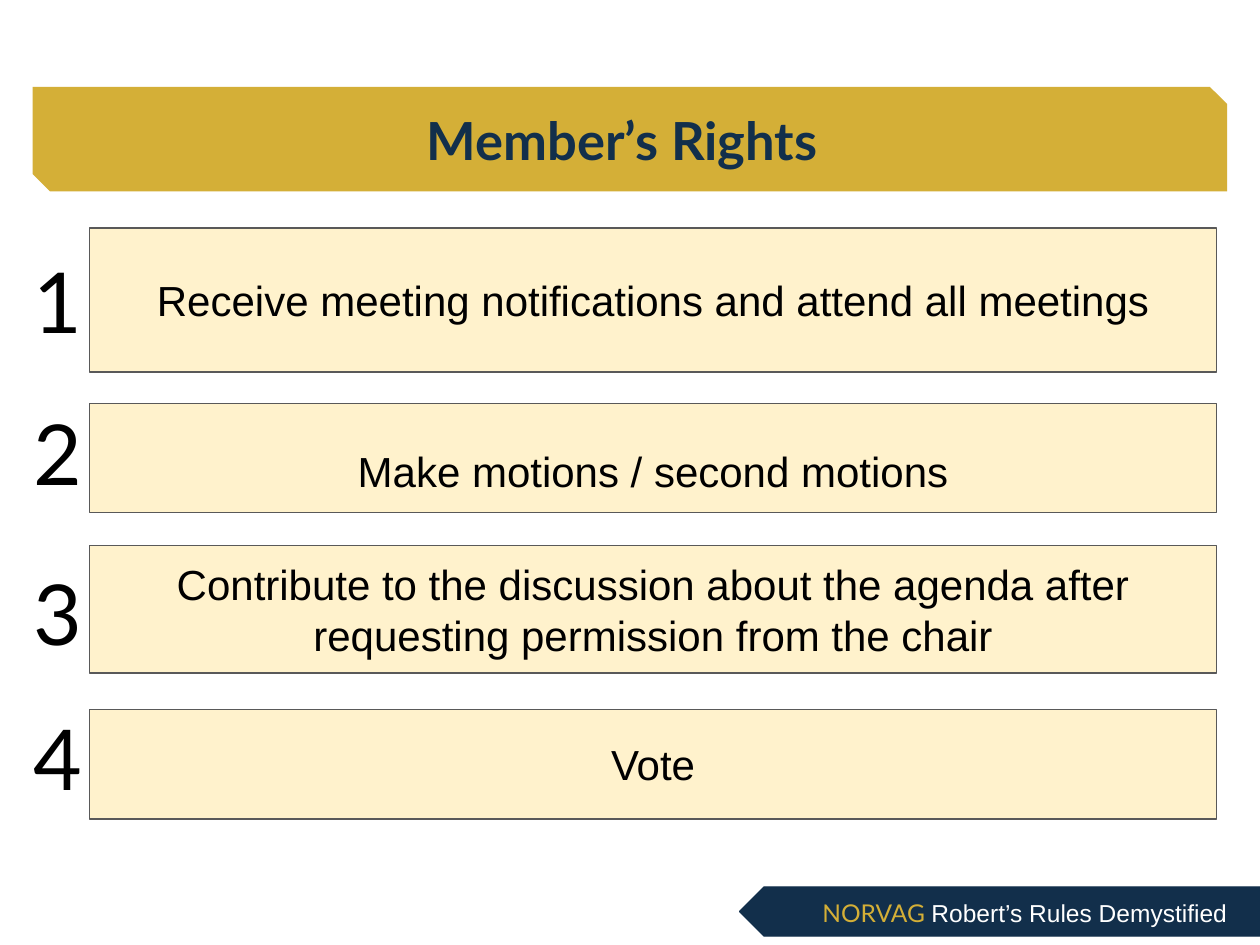
from typing import NamedTuple

from pptx import Presentation
from pptx.dml.color import RGBColor
from pptx.enum.shapes import MSO_SHAPE as Shape
from pptx.enum.text import MSO_ANCHOR as Anchor, PP_ALIGN as Align
from pptx.util import Cm, Pt

GOLD = RGBColor(0xD4, 0xAF, 0x37)
NAVY = RGBColor(0x12, 0x2F, 0x4B)
CREAM = RGBColor(0xFF, 0xF2, 0xCC)
GREY = RGBColor(0x59, 0x59, 0x59)
BLACK = RGBColor(0, 0, 0)
WHITE = RGBColor(0xFF, 0xFF, 0xFF)

INSET = Cm(0.25)
NUMBER_LEFT, NUMBER_WIDTH, NUMBER_HEIGHT = 0.43, 1.78, 2.21
RIGHT_LEFT, RIGHT_WIDTH = 1.8, 22.73


class Box(NamedTuple):
    left: float
    top: float
    width: float
    height: float


class Run(NamedTuple):
    text: str
    size: float
    font: str
    color: RGBColor
    bold: bool = False


class Right(NamedTuple):
    text: str
    top: float
    height: float
    number_top: float
    spacing: dict


SPACED = {"space_before": Pt(6.4), "space_after": Pt(10)}
RIGHTS = [
    Right("Receive meeting notifications and attend all meetings", 4.6, 2.9, 4.78, {}),
    Right("Make motions / second motions", 8.13, 2.21, 7.85,
          {**SPACED, "line_spacing": 1.5}),
    Right("Contribute to the discussion about the agenda after requesting "
          "permission from the chair", 11, 2.57, 11.07, SPACED),
    Right("Vote", 14.3, 2.21, 14, SPACED),
]


def set_format(target, values: dict) -> None:
    for name, value in values.items():
        setattr(target, name, value)


def write(sp, runs: list[Run], anchor=Anchor.MIDDLE, align=Align.CENTER,
          spacing: dict | None = None) -> None:
    tf = sp.text_frame
    set_format(tf, {"word_wrap": True, "vertical_anchor": anchor,
                    "margin_left": INSET, "margin_right": INSET,
                    "margin_top": INSET, "margin_bottom": INSET})
    p = tf.paragraphs[0]
    set_format(p, {"alignment": align, **(spacing or {})})
    for run in runs:
        r = p.add_run()
        r.text = run.text
        set_format(r.font, {"size": Pt(run.size), "name": run.font, "bold": run.bold})
        r.font.color.rgb = run.color


def add_shape(s, kind, box: Box, fill: RGBColor, line: RGBColor | None = None):
    sp = s.shapes.add_shape(kind, *map(Cm, box))
    sp.shadow.inherit = False
    sp.fill.solid()
    sp.fill.fore_color.rgb = fill
    if line is None:
        sp.line.fill.background()
    else:
        sp.line.color.rgb = line
        sp.line.width = Pt(0.75)
    return sp


def add_text(s, box: Box, runs: list[Run], **layout) -> None:
    write(s.shapes.add_textbox(*map(Cm, box)), runs, **layout)


def add_right(s, number: int, right: Right) -> None:
    box = Box(RIGHT_LEFT, right.top, RIGHT_WIDTH, right.height)
    sp = add_shape(s, Shape.RECTANGLE, box, CREAM, GREY)
    write(sp, [Run(right.text, 24, "Arial", BLACK)], spacing=right.spacing)
    add_text(s, Box(NUMBER_LEFT, right.number_top, NUMBER_WIDTH, NUMBER_HEIGHT),
             [Run(str(number), 48, "Lato", BLACK)],
             anchor=Anchor.TOP, align=Align.LEFT)


def main() -> None:
    prs = Presentation()
    prs.slide_width, prs.slide_height = Cm(25.4), Cm(19.05)
    s = prs.slides.add_slide(prs.slide_layouts[6])

    # Title banner
    add_shape(s, Shape.SNIP_2_DIAG_RECTANGLE, Box(0.66, 1.75, 24.08, 2.11), GOLD)
    add_text(s, Box(0.71, 1.75, 23.67, 2.11),
             [Run("Member’s Rights", 30, "Lato", NAVY, bold=True)])

    # Footer ribbon
    ribbon = add_shape(s, Shape.PENTAGON, Box(14.91, 17.88, 10.49, 0.99), NAVY, NAVY)
    ribbon.rotation = 180
    add_text(s, Box(15.54, 18.19, 10.24, 0.43),
             [Run("NORVAG ", 14, "Lato", GOLD),
              Run("Robert’s Rules Demystified", 14, "Arial", WHITE)])

    # Numbered rights
    for number, right in enumerate(RIGHTS, start=1):
        add_right(s, number, right)

    prs.save("out.pptx")


if __name__ == "__main__":
    main()
